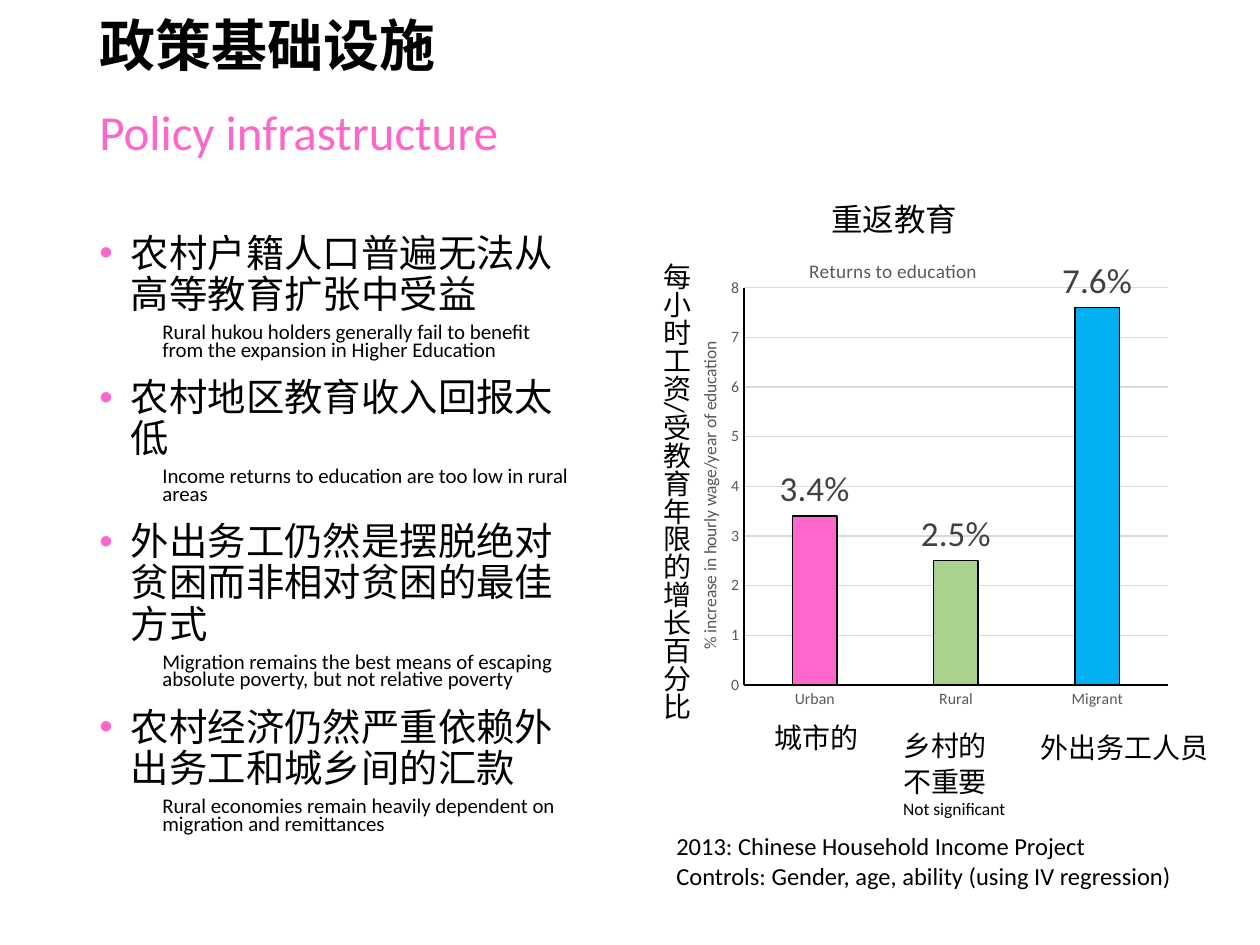
from lxml.etree import SubElement
from pptx import Presentation
from pptx.chart.data import CategoryChartData
from pptx.dml.color import RGBColor
from pptx.enum.chart import XL_CHART_TYPE, XL_LABEL_POSITION, XL_TICK_MARK
from pptx.enum.text import MSO_ANCHOR, PP_ALIGN
from pptx.oxml import parse_xml
from pptx.oxml.ns import nsdecls, qn
from pptx.util import Pt

BLACK, PINK, GREEN, BLUE = "000000", "FF66CC", "A9D18E", "00B0F0"
GREY, DARK_GREY, GRID = "595959", "404040", "D9D9D9"


def rgb(value):
    return RGBColor.from_string(value)


def set_layout(element, x, y, w=None, h=None):
    """Give a chart title or plot area a place, in fractions of the chart."""
    for old in element.findall(qn("c:layout")):
        element.remove(old)
    parts = {"xMode": "edge", "yMode": "edge", "x": x, "y": y}
    if w:
        parts = {"layoutTarget": "inner", **parts, "w": w, "h": h}
    layout = parse_xml(f"<c:layout {nsdecls('c')}/>")
    manual = SubElement(layout, qn("c:manualLayout"))
    for name, value in parts.items():
        SubElement(manual, qn(f"c:{name}")).set("val", str(value))
    text = element.find(qn("c:tx"))
    element.insert(0 if text is None else 1, layout)


class Deck:
    face = "Calibri"

    def __init__(self):
        self.prs = Presentation()
        self.prs.slide_width, self.prs.slide_height = Pt(720), Pt(540)
        self.s = self.prs.slides.add_slide(self.prs.slide_layouts[5])

    def font(self, font, size, color=BLACK, bold=False):
        values = {"name": self.face, "size": Pt(size), "bold": bold}
        for name, value in values.items():
            setattr(font, name, value)
        font.color.rgb = rgb(color)

    def paragraph(self, tf, text, size, color=BLACK, bold=False, **spacing):
        p = tf.paragraphs[0]
        if p.runs:
            p = tf.add_paragraph()
        values = {"alignment": PP_ALIGN.LEFT, **spacing}
        for name, value in values.items():
            setattr(p, name, value)
        r = p.add_run()
        r.text = text
        self.font(r.font, size, color, bold)
        return p

    def title(self, text, box, size):
        sp = self.s.shapes.title
        for name, value in zip(("left", "top", "width", "height"), box):
            setattr(sp, name, Pt(value))
        sp.text_frame.vertical_anchor = MSO_ANCHOR.MIDDLE
        self.paragraph(sp.text_frame, text, size, bold=True, line_spacing=0.9)

    def box(self, box, lines=(), color=BLACK, wrap=True, vertical=False):
        tf = self.s.shapes.add_textbox(*map(Pt, box)).text_frame
        tf.word_wrap = wrap
        if vertical:
            tf._txBody.bodyPr.set("vert", "eaVert")
        for text, size in lines:
            self.paragraph(tf, text, size, color)
        return tf

    def bullets(self, box, pairs):
        """Write each Chinese point as a bullet with its English gloss below."""
        tf = self.box(box)
        for i, (point, gloss) in enumerate(pairs):
            p = self.paragraph(tf, point, 21.9, line_spacing=0.9,
                               space_before=Pt(10 if i else 0))
            pPr = p._p.get_or_add_pPr()
            pPr.set("marL", str(Pt(18)))
            pPr.set("indent", str(-Pt(18)))
            color = SubElement(pPr, qn("a:buClr"))
            SubElement(color, qn("a:srgbClr")).set("val", PINK)
            SubElement(pPr, qn("a:buFont")).set("typeface", "Arial")
            SubElement(pPr, qn("a:buChar")).set("char", "•")
            p = self.paragraph(tf, gloss, 11.9, line_spacing=0.7,
                               space_before=Pt(5), level=1)
            pPr = p._p.get_or_add_pPr()
            pPr.set("marL", str(Pt(36)))
            pPr.set("indent", "0")

    def axis(self, axis):
        axis.major_tick_mark = axis.minor_tick_mark = XL_TICK_MARK.NONE
        self.font(axis.tick_labels.font, 9, GREY)
        axis.format.line.color.rgb = rgb(BLACK)
        axis.format.line.width = Pt(0.75)

    def chart_title(self, owner, text, size, x, y):
        """Title a chart or an axis."""
        owner.has_title = True
        title = owner.chart_title if hasattr(owner, "chart_title") else owner.axis_title
        p = title.text_frame.paragraphs[0]
        r = p.add_run()
        r.text = text
        self.font(r.font, size, GREY)
        set_layout(title._element, x, y)

    def column_chart(self, box, title, value_title, values, colors):
        data = CategoryChartData()
        data.categories = list(values)
        data.add_series("Series 1", list(values.values()))
        chart = self.s.shapes.add_chart(
            XL_CHART_TYPE.COLUMN_CLUSTERED, *map(Pt, box), data).chart
        self.font(chart.font, 10)
        chart.has_legend = False
        self.chart_title(chart, title, 11, 0.36, 0.05)
        set_layout(chart._chartSpace.chart.plotArea, 0.257, 0.118, 0.711, 0.8)

        self.axis(chart.category_axis)
        axis = chart.value_axis
        self.axis(axis)
        axis.minimum_scale, axis.maximum_scale, axis.major_unit = 0, 8, 1
        axis.major_gridlines.format.line.color.rgb = rgb(GRID)
        axis.major_gridlines.format.line.width = Pt(0.75)
        self.chart_title(axis, value_title, 10, 0.175, 0.22)

        plot = chart.plots[0]
        plot.gap_width, plot.overlap, plot.vary_by_categories = 219, -27, False
        plot.has_data_labels = True
        labels = plot.data_labels
        labels.show_value = True
        labels.number_format, labels.number_format_is_linked = '0.0"%"', False
        labels.position = XL_LABEL_POSITION.OUTSIDE_END
        self.font(labels.font, 20, DARK_GREY)
        for i, color in enumerate(colors):
            style = plot.series[0].points[i].format
            style.fill.solid()
            style.fill.fore_color.rgb = rgb(color)
            style.line.color.rgb = rgb(BLACK)
            style.line.width = Pt(0.75)


def main():
    deck = Deck()
    deck.title("政策基础设施", (49.7, 9.4, 620.6, 36.7), 32)
    tf = deck.box((49.7, 58.3, 670, 44))
    deck.paragraph(tf, "Policy infrastructure", 28, PINK, line_spacing=0.9)

    deck.column_chart(
        (337.7, 131, 340.6, 283.7), "Returns to education",
        "% increase in hourly wage/year of education",
        {"Urban": 3.4, "Rural": 2.5, "Migrant": 7.6}, (PINK, GREEN, BLUE))

    deck.box((468, 110.9, 92.9, 28.8), [("重返教育", 18)])
    deck.box((365.8, 143.3, 33.8, 272.2),
             [("每小时工资/受教育年限的增长百分比", 16)], wrap=False, vertical=True)
    for text, left, top, width in (("城市的", 435.6, 408.2, 63.4),
                                   ("乡村的", 509, 412.6, 63.4),
                                   ("外出务工人员", 587.5, 414, 111.6)):
        deck.box((left, top, width, 26.6), [(text, 16)], wrap=False)
    deck.box((509, 433.4, 73.4, 38.9),
             [("不重要", 16), ("Not significant", 10)], wrap=False)
    deck.box((379.4, 471.6, 307.4, 41),
             [("2013: Chinese Household Income Project", 14),
              ("Controls: Gender, age, ability (using IV regression)", 14)])

    deck.bullets((49.7, 130.3, 282.2, 374.4), (
        ("农村户籍人口普遍无法从高等教育扩张中受益",
         "Rural hukou holders generally fail to benefit from the expansion in Higher Education"),
        ("农村地区教育收入回报太低",
         "Income returns to education are too low in rural areas"),
        ("外出务工仍然是摆脱绝对贫困而非相对贫困的最佳方式",
         "Migration remains the best means of escaping absolute poverty, but not relative poverty"),
        ("农村经济仍然严重依赖外出务工和城乡间的汇款",
         "Rural economies remain heavily dependent on migration and remittances")))
    deck.prs.save("out.pptx")


if __name__ == "__main__":
    main()
